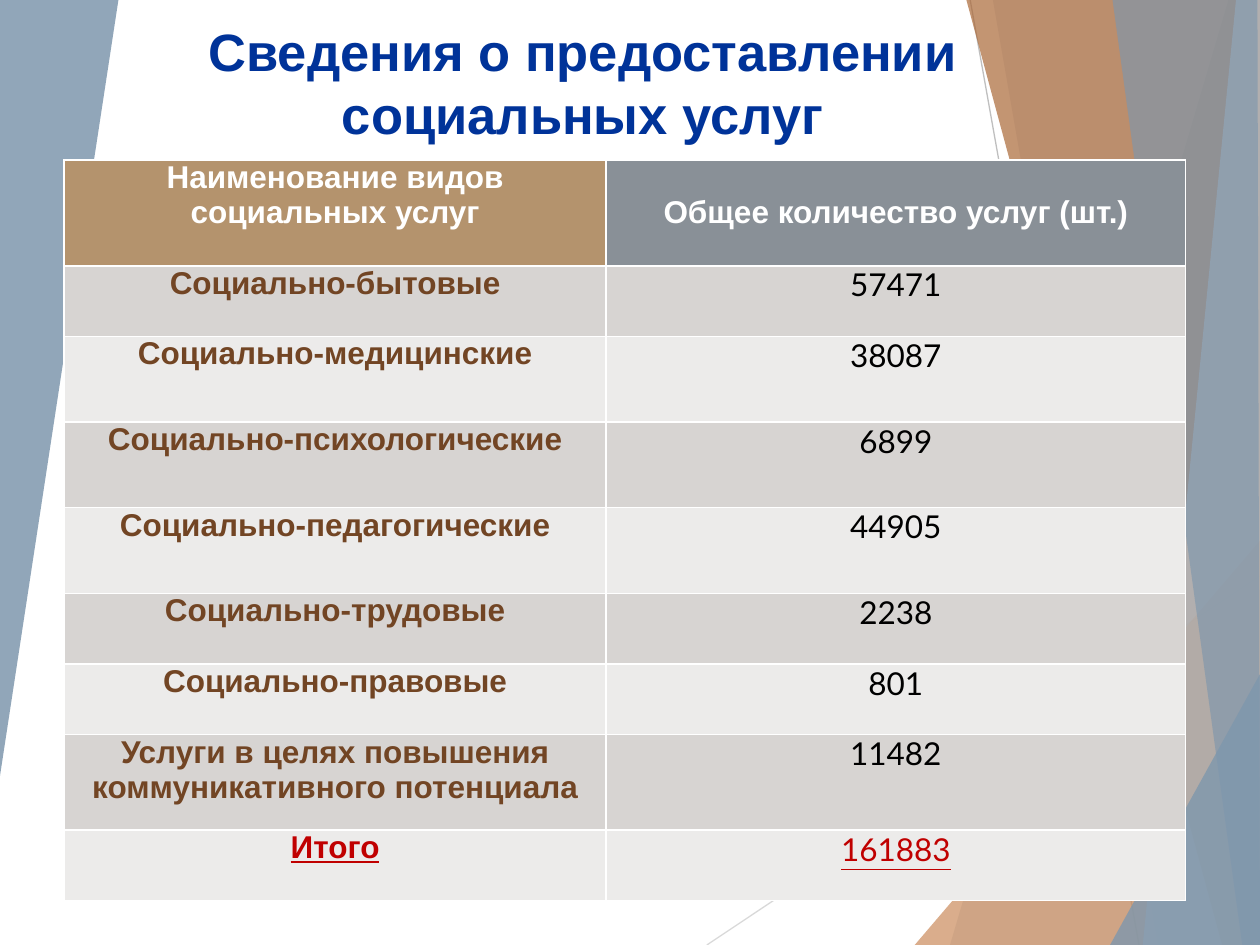
"""Build the slide on social services provided, with a table over angled bands."""
from lxml import etree
from pptx import Presentation
from pptx import util as u
from pptx.dml.color import RGBColor
from pptx.enum import shapes, text
from pptx.oxml.ns import qn

TITLE = "Сведения о предоставлении\vсоциальных услуг"
HEADER = ("Наименование видов социальных услуг", "Общее количество услуг (шт.)")
SERVICES = [
    ("Социально-бытовые", "57471", 0.56),
    ("Социально-медицинские", "38087", 0.68),
    ("Социально-психологические", "6899", 0.68),
    ("Социально-педагогические", "44905", 0.68),
    ("Социально-трудовые", "2238", 0.56),
    ("Социально-правовые", "801", 0.56),
    ("Услуги в целях повышения коммуникативного потенциала", "11482", 0.76),
    ("Итого", "161883", 0.56),
]
HEADER_HEIGHT = 0.84
COLUMNS = (4.3, 4.6)
TABLE_LEFT, TABLE_TOP = 0.51, 1.27

THEME = {
    "title": "003399", "title_size": 30, "cell_size": 18,
    "heading_font": "Arial", "number_font": "Lato",
    "header_fills": ("B4936D", "899097"), "header_text": "FFFFFF",
    "bands": ("D7D4D2", "ECEBEA"),
    "name": "724524", "number": "000000", "total": "C00000",
    "steel": "7E97AD", "mist": "B2C1CE", "sand": "CC8E60", "brown": "AA6837",
}

RAYS = [
    ((5.61, 7.5), (10, 4.57), "D9D9D9"),
    ((7.7, 0), (9.04, 7.5), "BFBFBF"),
]
FACETS = [
    ("steel", 30, [(9.75, 0), (7.54, 7.5), (10, 7.5), (10, 0)]),
    ("steel", 20, [(7.88, 0), (9.19, 7.5), (10, 7.5), (10, 0)]),
    ("sand", 72, [(7.26, 7.5), (10, 4.29), (10, 7.5)]),
    ("brown", 70, [(7.67, 0), (9.7, 7.5), (10, 7.5), (10, 0)]),
    ("mist", 70, [(9.81, 0), (9.07, 7.5), (10, 7.5), (10, 0)]),
    ("steel", 65, [(8.83, 0), (9.86, 7.5), (10, 7.5), (9.98, 0)]),
    ("steel", 80, [(8.81, 7.5), (10, 5.35), (10, 7.5)]),
    ("steel", 85, [(0, 0), (0.94, 0), (0, 6.16)]),
]


def rgb(value):
    return RGBColor.from_string(value)


def add_ray(slide, start, end, color):
    ray = slide.shapes.add_connector(
        shapes.MSO_CONNECTOR.STRAIGHT, *(u.Inches(v) for v in start + end))
    ray.line.color.rgb = rgb(color)
    ray.line.width = u.Pt(0.75)
    etree.SubElement(ray._element.spPr, qn("a:effectLst"))


def add_facet(slide, color, opacity, points):
    corners = [(u.Inches(x), u.Inches(y)) for x, y in points]
    builder = slide.shapes.build_freeform(*corners[0])
    builder.add_line_segments(corners[1:], close=True)
    sp = builder.convert_to_shape()
    sp.shadow.inherit = False
    sp.line.fill.background()
    sp.fill.solid()
    sp.fill.fore_color.rgb = rgb(THEME[color])
    tint = sp._element.spPr.find(".//" + qn("a:srgbClr"))
    etree.SubElement(tint, qn("a:alpha"), val=str(opacity * 1000))


def write(tf, content, font, size, color, bold, underline=None):
    tf.text = content
    for p in tf.paragraphs:
        p.alignment = text.PP_ALIGN.CENTER
        for r in p.runs:
            r.font.name = font
            r.font.size = u.Pt(size)
            r.font.color.rgb = rgb(color)
            r.font.bold = bold
            r.font.underline = underline


def add_title(slide):
    sp = slide.shapes.add_textbox(
        u.Inches(0), u.Inches(0.15), u.Inches(9.25), u.Inches(1))
    tf = sp.text_frame
    tf.word_wrap = True
    tf.vertical_anchor = text.MSO_ANCHOR.MIDDLE
    write(tf, TITLE, THEME["heading_font"], THEME["title_size"], THEME["title"], True)


def fill_cell(cell, content, fill, font, color, bold, underline=None):
    cell.margin_left = cell.margin_right = u.Inches(0.07)
    cell.margin_top = cell.margin_bottom = 0
    cell.fill.solid()
    cell.fill.fore_color.rgb = rgb(fill)
    write(cell.text_frame, content, font, THEME["cell_size"], color, bold, underline)


def add_services(slide):
    heights = [HEADER_HEIGHT] + [height for _, _, height in SERVICES]
    table = slide.shapes.add_table(
        len(heights), len(COLUMNS), u.Inches(TABLE_LEFT), u.Inches(TABLE_TOP),
        u.Inches(sum(COLUMNS)), u.Inches(sum(heights))).table
    for column, width in zip(table.columns, COLUMNS):
        column.width = u.Inches(width)
    for row, height in zip(table.rows, heights):
        row.height = u.Inches(height)
    for i, (label, fill) in enumerate(zip(HEADER, THEME["header_fills"])):
        fill_cell(table.cell(0, i), label, fill,
                  THEME["heading_font"], THEME["header_text"], True)
    table.cell(0, 1).vertical_anchor = text.MSO_ANCHOR.MIDDLE
    for i, (name, count, _) in enumerate(SERVICES):
        total = i == len(SERVICES) - 1
        band = THEME["bands"][i % 2]
        name_color = THEME["total" if total else "name"]
        count_color = THEME["total" if total else "number"]
        fill_cell(table.cell(i + 1, 0), name, band,
                  THEME["heading_font"], name_color, True, total)
        fill_cell(table.cell(i + 1, 1), count, band,
                  THEME["number_font"], count_color, False, total)


def main():
    prs = Presentation()
    prs.slide_width, prs.slide_height = u.Inches(10), u.Inches(7.5)
    slide = prs.slides.add_slide(prs.slide_layouts[6])
    for ray in RAYS:
        add_ray(slide, *ray)
    for facet in FACETS:
        add_facet(slide, *facet)
    add_title(slide)
    add_services(slide)
    prs.save("out.pptx")


if __name__ == "__main__":
    main()
